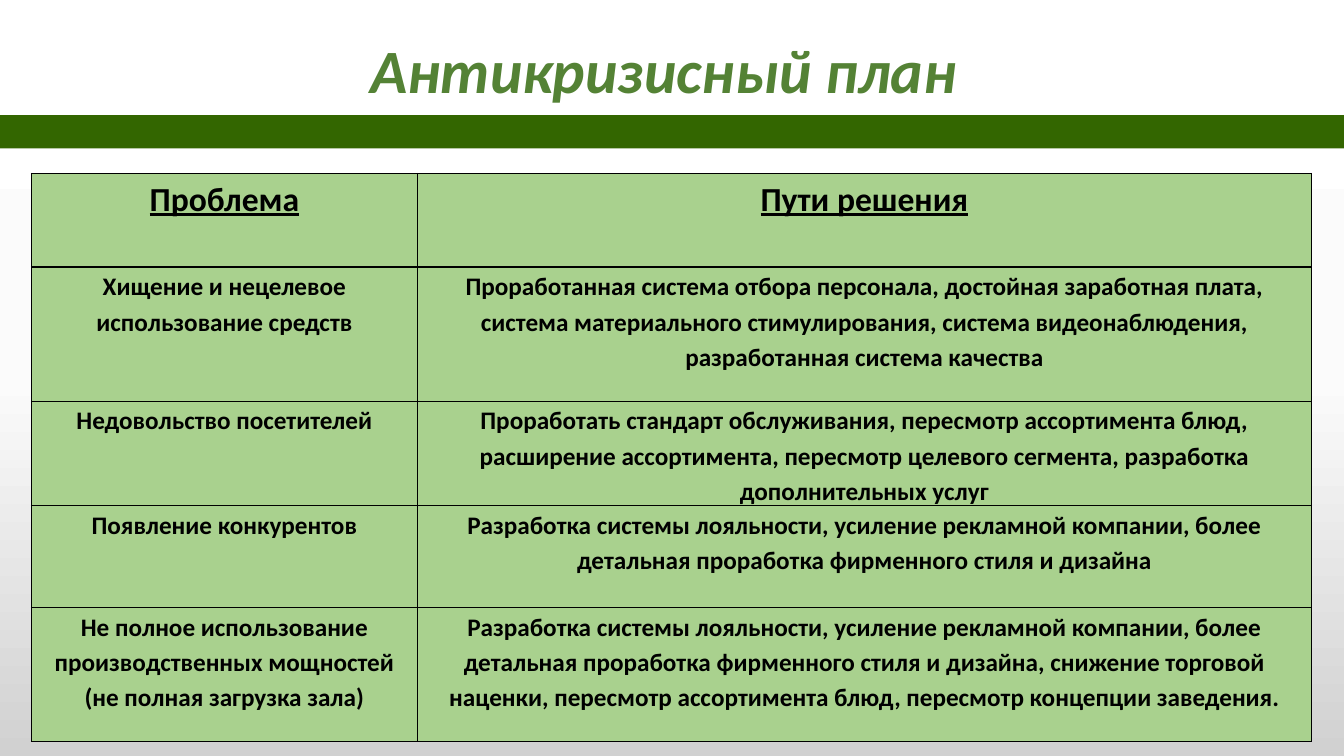
from copy import deepcopy

from lxml import etree
from pptx import Presentation
from pptx import util as u
from pptx.dml.color import RGBColor
from pptx.enum import shapes, text
from pptx.oxml import ns

WHITE = RGBColor(0xFF, 0xFF, 0xFF)
OFF_WHITE = RGBColor(0xFB, 0xFB, 0xFB)
GREY = RGBColor(0xD1, 0xD1, 0xD1)
BLACK = RGBColor(0x00, 0x00, 0x00)
TITLE_GREEN = RGBColor(0x54, 0x82, 0x35)
BAND_GREEN = RGBColor(0x33, 0x66, 0x00)
CELL_GREEN = RGBColor(0xA9, 0xD1, 0x8E)

PLAN = [
    ("Проблема", "Пути решения"),
    ("Хищение и нецелевое использование средств",
     "Проработанная система отбора персонала, достойная заработная плата, "
     "система материального стимулирования, система видеонаблюдения, "
     "разработанная система качества"),
    ("Недовольство посетителей",
     "Проработать стандарт обслуживания, пересмотр ассортимента блюд, "
     "расширение ассортимента, пересмотр целевого сегмента, разработка "
     "дополнительных услуг"),
    ("Появление конкурентов",
     "Разработка системы лояльности, усиление рекламной компании, более "
     "детальная проработка фирменного стиля и дизайна"),
    ("Не полное использование производственных мощностей "
     "(не полная загрузка зала)",
     "Разработка системы лояльности, усиление рекламной компании, более "
     "детальная проработка фирменного стиля и дизайна, снижение торговой "
     "наценки, пересмотр ассортимента блюд, пересмотр концепции заведения."),
]
COLUMN_WIDTHS = [9.73, 22.53]
ROW_HEIGHTS = [2.36, 3.38, 2.54, 2.57, 3.38]


class SlideBuilder:
    font_name = "Calibri"

    def __init__(self, s):
        self.s = s

    def background(self, colors):
        fill = self.s.background.fill
        fill.gradient()
        fill.gradient_angle = 270
        gs_list = self.s.element.find(".//" + ns.qn("a:gsLst"))
        gs_list.insert(1, deepcopy(gs_list[0]))
        for i, (stop, color) in enumerate(zip(fill.gradient_stops, colors)):
            stop.color.rgb = color
            stop.position = i / (len(colors) - 1)

    def set_text(self, tf, content, size, color, spacing):
        tf.text = content
        p = tf.paragraphs[0]
        p.alignment = text.PP_ALIGN.CENTER
        p.line_spacing = spacing
        font = p.runs[0].font
        font.name = self.font_name
        font.size = u.Pt(size)
        font.bold = True
        font.color.rgb = color
        return font

    def title(self, content, left, top, width, height):
        sp = self.s.shapes.add_textbox(*map(u.Cm, (left, top, width, height)))
        tf = sp.text_frame
        tf.word_wrap = True
        tf.vertical_anchor = text.MSO_ANCHOR.BOTTOM
        self.set_text(tf, content, 44, TITLE_GREEN, 0.9).italic = True

    def band(self, left, top, width, height):
        sp = self.s.shapes.add_shape(
            shapes.MSO_SHAPE.RECTANGLE, *map(u.Cm, (left, top, width, height)))
        sp.shadow.inherit = False
        sp.fill.solid()
        sp.fill.fore_color.rgb = BAND_GREEN
        sp.line.fill.background()

    def borders(self, cell):
        properties = cell._tc.get_or_add_tcPr()
        for i, side in enumerate(("lnL", "lnR", "lnT", "lnB")):
            line = etree.Element(ns.qn("a:" + side), w=str(u.Pt(1)))
            fill = etree.SubElement(line, ns.qn("a:solidFill"))
            etree.SubElement(fill, ns.qn("a:srgbClr"), val=str(BLACK))
            properties.insert(i, line)

    def table(self, rows, left, top, widths, heights):
        table = self.s.shapes.add_table(
            len(rows), len(widths), u.Cm(left), u.Cm(top),
            u.Cm(sum(widths)), u.Cm(sum(heights))).table
        for column, width in zip(table.columns, widths):
            column.width = u.Cm(width)
        for i, (row, height) in enumerate(zip(table.rows, heights)):
            row.height = u.Cm(height)
            for cell, content in zip(row.cells, rows[i]):
                cell.margin_top = cell.margin_bottom = 0
                cell.fill.solid()
                cell.fill.fore_color.rgb = CELL_GREEN
                self.borders(cell)
                size = 18 if i else 24
                font = self.set_text(cell.text_frame, content, size, BLACK, 1.15)
                font.underline = i == 0


def main():
    prs = Presentation()
    prs.slide_width = u.Cm(33.87)
    prs.slide_height = u.Cm(19.05)
    slide = SlideBuilder(prs.slides.add_slide(prs.slide_layouts[6]))
    slide.background([WHITE, OFF_WHITE, GREY])
    slide.title("Антикризисный план", 3.18, 0.41, 27.1, 2.41)
    slide.table(PLAN, 0.79, 4.37, COLUMN_WIDTHS, ROW_HEIGHTS)
    slide.band(0, 2.9, 33.87, 0.84)
    prs.save("out.pptx")


if __name__ == "__main__":
    main()
